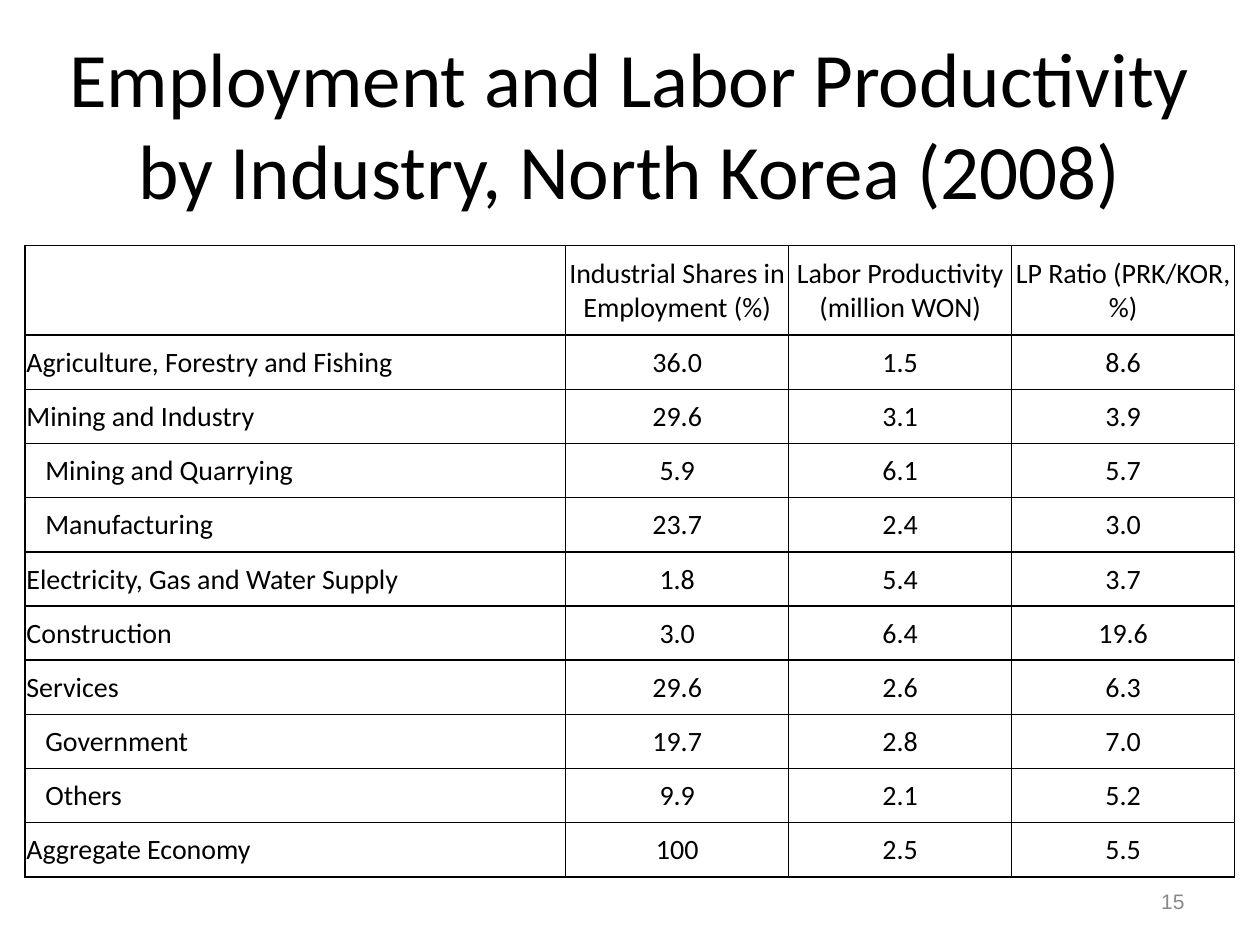
from lxml.etree import SubElement
from pptx import Presentation
from pptx.dml.color import RGBColor
from pptx.enum.text import MSO_ANCHOR, PP_ALIGN
from pptx.oxml.ns import qn
from pptx.util import Inches, Pt

BLACK = RGBColor(0x00, 0x00, 0x00)
GRAY = RGBColor(0x89, 0x89, 0x89)

HEADERS = ["", "Industrial Shares in Employment (%)",
           "Labor Productivity (million WON)", "LP Ratio (PRK/KOR, %)"]
INDUSTRIES = [
    ("Agriculture, Forestry and Fishing", "36.0", "1.5", "8.6"),
    ("Mining and Industry", "29.6", "3.1", "3.9"),
    ("Mining and Quarrying", "5.9", "6.1", "5.7"),
    ("Manufacturing", "23.7", "2.4", "3.0"),
    ("Electricity, Gas and Water Supply", "1.8", "5.4", "3.7"),
    ("Construction", "3.0", "6.4", "19.6"),
    ("Services", "29.6", "2.6", "6.3"),
    ("Government", "19.7", "2.8", "7.0"),
    ("Others", "9.9", "2.1", "5.2"),
    ("Aggregate Economy", "100", "2.5", "5.5"),
]
SUBSECTORS = {"Mining and Quarrying", "Manufacturing", "Government", "Others"}


class SlideBuilder:
    font = "Calibri"

    def __init__(self, slide):
        self.slide = slide

    def set_text(self, frame, text, size, align, color=BLACK, font=None):
        frame.text = text
        frame.word_wrap = True
        paragraph = frame.paragraphs[0]
        paragraph.alignment = align
        paragraph.font.name = font or self.font
        paragraph.font.size = Pt(size)
        paragraph.font.color.rgb = color

    def title(self, text, left, top, width, height):
        title = self.slide.shapes.title
        title.left, title.top = Inches(left), Inches(top)
        title.width, title.height = Inches(width), Inches(height)
        self.set_text(title.text_frame, text, 44, PP_ALIGN.CENTER)
        title.text_frame.vertical_anchor = MSO_ANCHOR.MIDDLE

    def page_number(self, text, left, top, width, height):
        number = self.slide.shapes.add_textbox(
            Inches(left), Inches(top), Inches(width), Inches(height))
        self.set_text(number.text_frame, text, 12, PP_ALIGN.RIGHT, GRAY, "Arial")
        number.text_frame.vertical_anchor = MSO_ANCHOR.MIDDLE

    def table(self, rows, left, top, column_widths, row_heights):
        table = self.slide.shapes.add_table(
            len(rows), len(column_widths), Inches(left), Inches(top),
            Inches(sum(column_widths)), Inches(sum(row_heights))).table
        table.first_row = table.horz_banding = False
        for column, width in zip(table.columns, column_widths):
            column.width = Inches(width)
        for row, height, texts in zip(table.rows, row_heights, rows):
            row.height = Inches(height)
            for index, (cell, text) in enumerate(zip(row.cells, texts)):
                align = PP_ALIGN.CENTER if index else PP_ALIGN.LEFT
                indent = 0.16 if text in SUBSECTORS else 0.01
                self.cell(cell, text, align, indent)

    def cell(self, cell, text, align, indent):
        self.set_text(cell.text_frame, text, 16, align)
        cell.vertical_anchor = MSO_ANCHOR.MIDDLE
        cell.margin_left = Inches(indent)
        cell.margin_top = cell.margin_right = Inches(0.01)
        cell.margin_bottom = 0
        self.borders(cell)
        cell.fill.background()

    def borders(self, cell):
        properties = cell._tc.get_or_add_tcPr()
        for side in ("a:lnL", "a:lnR", "a:lnT", "a:lnB"):
            line = SubElement(properties, qn(side), w=str(Pt(1)))
            fill = SubElement(line, qn("a:solidFill"))
            SubElement(fill, qn("a:srgbClr"), val=str(BLACK))


def main():
    presentation = Presentation()
    presentation.slide_width = Inches(10)
    presentation.slide_height = Inches(7.5)
    title_only = presentation.slide_layouts[5]
    builder = SlideBuilder(presentation.slides.add_slide(title_only))

    builder.title("Employment and Labor Productivity by Industry, North Korea (2008)",
                  0.2, 0.35, 9.6, 1.25)
    builder.page_number("15", 7.17, 6.95, 2.33, 0.4)
    builder.table([HEADERS, *INDUSTRIES], 0.2, 1.95,
                  column_widths=[4.29] + [1.77] * 3,
                  row_heights=[0.71] + [0.43] * len(INDUSTRIES))
    presentation.save("out.pptx")


if __name__ == "__main__":
    main()
